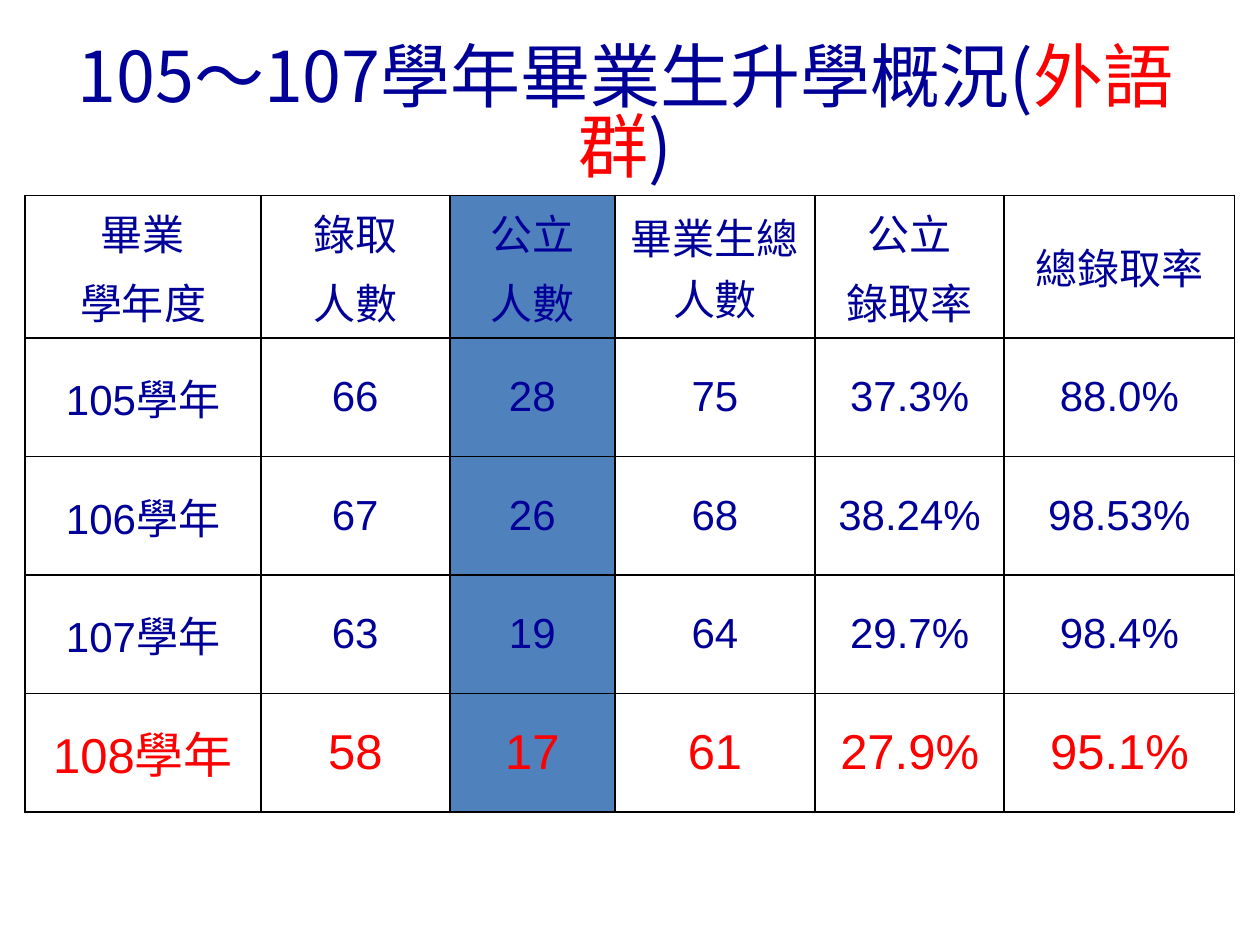
from dataclasses import dataclass

from lxml.etree import SubElement
from pptx import Presentation
from pptx.dml.color import RGBColor
from pptx.enum.text import MSO_ANCHOR as Anchor, MSO_AUTO_SIZE as AutoSize, PP_ALIGN as Align
from pptx.oxml.ns import qn
from pptx.util import Inches, Pt


@dataclass(frozen=True)
class Theme:
    navy: str = "000099"
    red: str = "FF0000"
    blue: str = "4F81BD"
    white: str = "FFFFFF"
    black: str = "000000"
    title_font: str = "Noto Sans CJK JP"
    table_font: str = "Arial"
    title_size: int = 40
    body_size: int = 24
    latest_size: int = 28
    border: int = 1


THEME = Theme()
TITLE = [("105～107學年畢業生升學概況(", THEME.navy), ("外語群", THEME.red), (")", THEME.navy)]
HEADINGS = ["畢業\n學年度", "錄取\n人數", "公立\n人數", "畢業生總人數", "公立\n錄取率", "總錄取率"]
YEARS = [
    ["105學年", "66", "28", "75", "37.3%", "88.0%"],
    ["106學年", "67", "26", "68", "38.24%", "98.53%"],
    ["107學年", "63", "19", "64", "29.7%", "98.4%"],
    ["108學年", "58", "17", "61", "27.9%", "95.1%"],
]
PUBLIC_COLUMN = 2
COLUMN_WIDTHS = [1.87, 1.5, 1.31, 1.59, 1.5, 1.83]
ROW_HEIGHTS = [1.08] + [0.94] * len(YEARS)


def apply(target, formats):
    for attribute, value in formats.items():
        setattr(target, attribute, value)


def format_font(font, name, size, color):
    apply(font, {"name": name, "size": Pt(size)})
    font.color.rgb = RGBColor.from_string(color)


def set_borders(cell):
    properties = cell._tc.get_or_add_tcPr()
    for position, side in enumerate(("a:lnL", "a:lnR", "a:lnT", "a:lnB")):
        edge = SubElement(properties, qn(side), w=str(Pt(THEME.border)))
        fill = SubElement(edge, qn("a:solidFill"))
        SubElement(fill, qn("a:srgbClr"), val=THEME.black)
        properties.insert(position, edge)


def fill_cell(cell, text, size, color, background):
    cell.text = text
    cell.vertical_anchor = Anchor.MIDDLE
    cell.fill.solid()
    cell.fill.fore_color.rgb = RGBColor.from_string(background)
    set_borders(cell)
    for number, line in enumerate(cell.text_frame.paragraphs):
        line.alignment = Align.CENTER
        if number:
            line.space_before = Pt(0.2 * size)
        for run in line.runs:
            format_font(run.font, THEME.table_font, size, color)


def place_title(slide, box):
    title = slide.shapes.title
    apply(title, dict(zip(("left", "top", "width", "height"), box)))
    frame = title.text_frame
    apply(frame, {"word_wrap": True, "auto_size": AutoSize.NONE,
                  "vertical_anchor": Anchor.MIDDLE})
    heading = frame.paragraphs[0]
    apply(heading, {"alignment": Align.CENTER, "line_spacing": 0.84})
    for text, color in TITLE:
        run = heading.add_run()
        run.text = text
        format_font(run.font, THEME.title_font, THEME.title_size, color)
        SubElement(run.font._element, qn("a:ea"), typeface=THEME.title_font)


def place_admissions(slide, box):
    rows = [HEADINGS] + YEARS
    table = slide.shapes.add_table(len(rows), len(HEADINGS), *box).table
    apply(table, {"first_row": False, "horz_banding": False})
    # Grid tracks share the box in proportion
    for column, share in zip(table.columns, COLUMN_WIDTHS):
        column.width = int(box[2] * share / sum(COLUMN_WIDTHS))
    for row, share in zip(table.rows, ROW_HEIGHTS):
        row.height = int(box[3] * share / sum(ROW_HEIGHTS))
    # The latest year stands out in red, public admissions in blue
    for r, values in enumerate(rows):
        latest = r == len(rows) - 1
        size = THEME.latest_size if latest else THEME.body_size
        color = THEME.red if latest else THEME.navy
        for c, value in enumerate(values):
            background = THEME.blue if c == PUBLIC_COLUMN else THEME.white
            fill_cell(table.cell(r, c), value, size, color, background)


def main():
    deck = Presentation()
    apply(deck, {"slide_width": Inches(10), "slide_height": Inches(7.5)})
    slide = deck.slides.add_slide(deck.slide_layouts[5])
    left, table_top = Inches(0.2), Inches(1.55)
    place_title(slide, (left, Inches(0.3), Inches(9.53), Inches(1.25)))
    place_admissions(slide, (left, table_top, Inches(sum(COLUMN_WIDTHS)),
                             Inches(sum(ROW_HEIGHTS))))
    deck.save("out.pptx")


if __name__ == "__main__":
    main()
